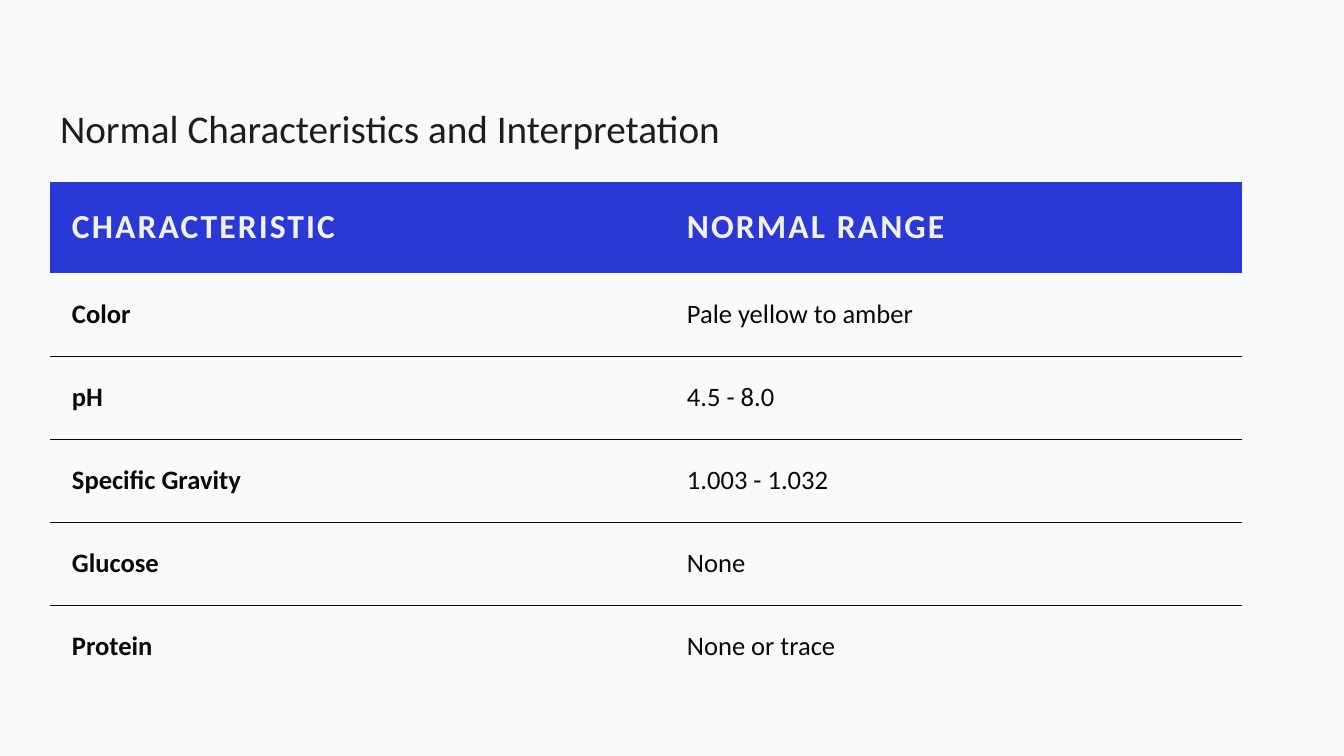
from dataclasses import dataclass

from lxml import etree
from pptx import Presentation
from pptx.dml.color import RGBColor
from pptx.enum.text import MSO_ANCHOR, MSO_AUTO_SIZE, PP_ALIGN
from pptx.oxml.ns import qn
from pptx.slide import Slide
from pptx.table import _Cell
from pptx.text.text import TextFrame
from pptx.util import Emu, Pt

LEFT = PP_ALIGN.LEFT
MIDDLE, BOTTOM = MSO_ANCHOR.MIDDLE, MSO_ANCHOR.BOTTOM
NO_AUTOFIT = MSO_AUTO_SIZE.NONE

EMU_PER_PX = 914400 / 100.8
FONT = "Calibri"
PLAIN_TABLE_STYLE = "{2D5ABB26-0587-4C30-8999-92F81FD0307C}"
COLORS = {
    "background": "F9FAFA",
    "title": "1D1D1D",
    "header_fill": "2A38D5",
    "header_text": "F1F1F1",
    "ink": "090909",
}

MARGIN_LEFT, CONTENT_WIDTH = 50, 1192
TITLE_TOP, TITLE_HEIGHT = 50, 107
TABLE_TOP = 182
COLUMN_WIDTHS = (615, 577)
HEADER_HEIGHT, ROW_HEIGHT = 91, 83
CELL_INSET = 22
RULE_WIDTH = Pt(0.5)


@dataclass(frozen=True)
class Finding:
    characteristic: str
    normal_range: str


HEADER = Finding("CHARACTERISTIC", "NORMAL RANGE")
FINDINGS = (
    Finding("Color", "Pale yellow to amber"),
    Finding("pH", "4.5 - 8.0"),
    Finding("Specific Gravity", "1.003 - 1.032"),
    Finding("Glucose", "None"),
    Finding("Protein", "None or trace"),
)


def px(length: int) -> Emu:
    return Emu(round(length * EMU_PER_PX))


def rgb(name: str) -> RGBColor:
    return RGBColor.from_string(COLORS[name])


def write(frame: TextFrame, text: str, *, size: int, color: str,
          bold: bool = False, tracking: float = 0,
          line_spacing: float = 1.0) -> None:
    """Fill the frame with one left-aligned run; tracking is in points."""
    paragraph = frame.paragraphs[0]
    paragraph.alignment = LEFT
    paragraph.line_spacing = line_spacing
    run = paragraph.add_run()
    run.text = text
    run.font.name = FONT
    run.font.size = Pt(size)
    run.font.bold = bold
    run.font.color.rgb = rgb(color)
    if tracking:
        run.font._element.set("spc", str(round(tracking * 100)))


def rule_edge(cell: _Cell, edge: str) -> None:
    """Draw a thin rule on one cell edge: lnT is the top, lnB the bottom."""
    line = etree.SubElement(cell._tc.get_or_add_tcPr(), qn(f"a:{edge}"),
                            w=str(RULE_WIDTH))
    fill = etree.SubElement(line, qn("a:solidFill"))
    etree.SubElement(fill, qn("a:srgbClr"), val=COLORS["ink"])


def add_title(slide: Slide, text: str) -> None:
    title = slide.shapes.title
    title.left, title.top = px(MARGIN_LEFT), px(TITLE_TOP)
    title.width, title.height = px(CONTENT_WIDTH), px(TITLE_HEIGHT)
    frame = title.text_frame
    frame.word_wrap = True
    frame.auto_size = NO_AUTOFIT
    frame.vertical_anchor = BOTTOM
    write(frame, text, size=28, color="title", line_spacing=0.9)


def add_findings_table(slide: Slide) -> None:
    records = (HEADER, *FINDINGS)
    heights = [HEADER_HEIGHT] + [ROW_HEIGHT] * len(FINDINGS)
    table = slide.shapes.add_table(
        len(records), len(COLUMN_WIDTHS), px(MARGIN_LEFT), px(TABLE_TOP),
        px(CONTENT_WIDTH), px(sum(heights))).table
    table._tbl.tblPr.find(qn("a:tableStyleId")).text = PLAIN_TABLE_STYLE
    table.horz_banding = False

    for column, width in zip(table.columns, COLUMN_WIDTHS):
        column.width = px(width)
    for row_index, (record, height) in enumerate(zip(records, heights)):
        table.rows[row_index].height = px(height)
        is_header = row_index == 0
        texts = (record.characteristic, record.normal_range)
        for column_index, text in enumerate(texts):
            cell = table.cell(row_index, column_index)
            cell.vertical_anchor = MIDDLE
            cell.margin_left = cell.margin_right = px(CELL_INSET)
            cell.margin_top = cell.margin_bottom = px(CELL_INSET)
            if row_index > 1:
                rule_edge(cell, "lnT")
            if 0 < row_index < len(FINDINGS):
                rule_edge(cell, "lnB")
            if is_header:
                cell.fill.solid()
                cell.fill.fore_color.rgb = rgb("header_fill")
                write(cell.text_frame, text, size=24, color="header_text",
                      bold=True, tracking=1.5)
            else:
                cell.fill.background()
                write(cell.text_frame, text, size=19, color="ink",
                      bold=column_index == 0)


def main() -> None:
    deck = Presentation()
    deck.slide_width, deck.slide_height = px(1344), px(756)
    slide = deck.slides.add_slide(deck.slide_layouts.get_by_name("Title Only"))
    slide.background.fill.solid()
    slide.background.fill.fore_color.rgb = rgb("background")
    add_title(slide, "Normal Characteristics and Interpretation")
    add_findings_table(slide)
    deck.save("out.pptx")


if __name__ == "__main__":
    main()
